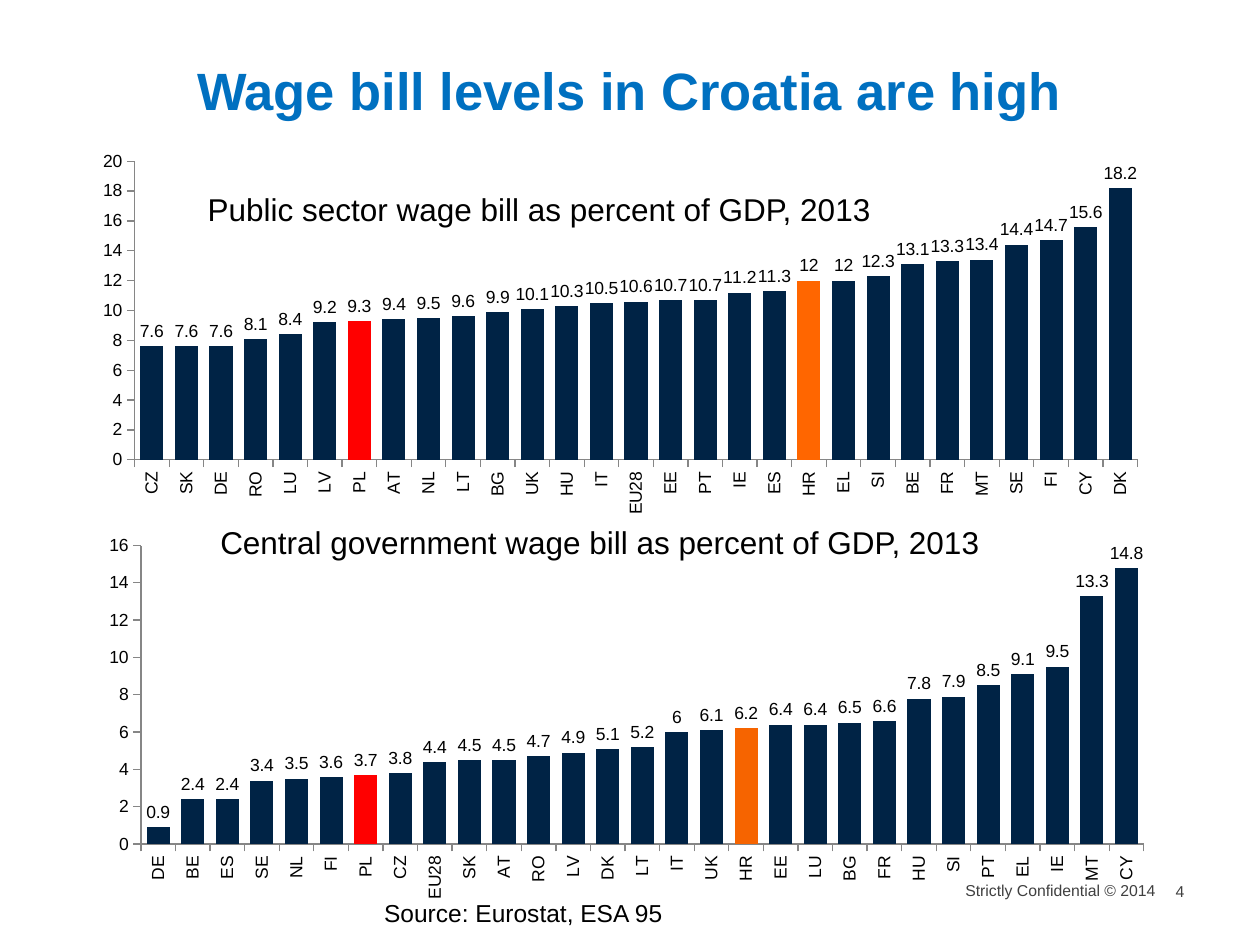
from lxml import etree
from pptx import Presentation
from pptx import util as u
from pptx.chart.data import CategoryChartData
from pptx.dml.color import RGBColor
from pptx.enum import chart as ch, text
from pptx.oxml import parse_xml
from pptx.oxml.ns import nsdecls, qn

COLS, ROWS = 100, 75
FONT = "Arial"
COLORS = {"title": "0070C0", "text": "000000", "footer": "404040", "axis": "868686",
          "bar": "002345", "PL": "FF0000", "HR": "FF6600", "HR central": "F66400"}

PUBLIC = (
    "CZ SK DE RO LU LV PL AT NL LT BG UK HU IT EU28 EE PT IE ES HR EL SI BE FR MT SE FI CY DK".split(),
    [7.6, 7.6, 7.6, 8.1, 8.4, 9.2, 9.3, 9.4, 9.5, 9.6, 9.9, 10.1, 10.3, 10.5, 10.6,
     10.7, 10.7, 11.2, 11.3, 12, 12, 12.3, 13.1, 13.3, 13.4, 14.4, 14.7, 15.6, 18.2])
CENTRAL = (
    "DE BE ES SE NL FI PL CZ EU28 SK AT RO LV DK LT IT UK HR EE LU BG FR HU SI PT EL IE MT CY".split(),
    [0.9, 2.4, 2.4, 3.4, 3.5, 3.6, 3.7, 3.8, 4.4, 4.5, 4.5, 4.7, 4.9, 5.1, 5.2,
     6, 6.1, 6.2, 6.4, 6.4, 6.5, 6.6, 7.8, 7.9, 8.5, 9.1, 9.5, 13.3, 14.8])


def rgb(name):
    return RGBColor.from_string(COLORS[name])


def place(box):
    """Turn a box in grid columns and rows into slide lengths."""
    return [u.Inches(v * size / n) for v, size, n in
            zip(box, (10, 7.5, 10, 7.5), (COLS, ROWS, COLS, ROWS))]


def style_font(font, size, color="text", bold=False):
    font.name, font.size, font.bold = FONT, u.Pt(size), bold
    font.color.rgb = rgb(color)


def add_text(s, box, words, size, color="text", bold=False, align=text.PP_ALIGN.LEFT,
             anchor=text.MSO_ANCHOR.TOP, margins=(0.1, 0.05, 0.1, 0.05), wrap=True):
    tf = s.shapes.add_textbox(*place(box)).text_frame
    tf.word_wrap, tf.vertical_anchor = wrap, anchor
    tf.margin_left, tf.margin_top, tf.margin_right, tf.margin_bottom = map(u.Inches, margins)
    tf.text = words
    p = tf.paragraphs[0]
    p.alignment = align
    style_font(p.runs[0].font, size, color, bold)


def style_axis(axis):
    axis.has_major_gridlines = False
    axis.major_tick_mark = ch.XL_TICK_MARK.OUTSIDE
    axis.minor_tick_mark = ch.XL_TICK_MARK.NONE
    axis.format.line.color.rgb = rgb("axis")
    axis.format.line.width = u.Pt(0.75)
    style_font(axis.tick_labels.font, 10)


def fix_plot_area(chart, x, y, w, h):
    """Set the inner plot area as shares of the chart."""
    area = chart.plots[0]._element.getparent()
    for old in area.findall(qn("c:layout")):
        area.remove(old)
    layout = parse_xml(f'<c:layout {nsdecls("c")}><c:manualLayout/></c:layout>')
    settings = {"layoutTarget": "inner", "xMode": "edge", "yMode": "edge",
                "x": x, "y": y, "w": w, "h": h}
    for tag, value in settings.items():
        etree.SubElement(layout[0], qn(f"c:{tag}")).set("val", str(value))
    area.insert(0, layout)


def wage_panel(s, box, data, top, marks, caption, caption_box, wrap):
    """Column chart with marked countries; the caption box is offset from the panel."""
    countries, shares = data
    cd = CategoryChartData()
    cd.categories = countries
    cd.add_series("Series 1", shares)
    chart = s.shapes.add_chart(ch.XL_CHART_TYPE.COLUMN_CLUSTERED, *place(box), cd).chart
    chart.has_legend = chart.has_title = False
    style_font(chart.font, 10)
    fix_plot_area(chart, 0.05, 0.04, 0.93, 0.79)

    style_axis(chart.category_axis)
    style_axis(chart.value_axis)
    chart.value_axis.minimum_scale, chart.value_axis.maximum_scale = 0, top
    chart.value_axis.major_unit = 2
    body = chart.category_axis._element.find(qn("c:txPr")).find(qn("a:bodyPr"))
    body.set("rot", "-5400000")
    body.set("vert", "horz")

    plot = chart.plots[0]
    plot.gap_width, plot.vary_by_categories = 50, False
    bars = plot.series[0]
    bars.invert_if_negative = False
    bars.format.fill.solid()
    bars.format.fill.fore_color.rgb = rgb("bar")
    for country, color in marks.items():
        fill = bars.points[countries.index(country)].format.fill
        fill.solid()
        fill.fore_color.rgb = rgb(color)
    plot.has_data_labels = True
    labels = plot.data_labels
    labels.show_value = True
    labels.position = ch.XL_LABEL_POSITION.OUTSIDE_END
    style_font(labels.font, 10)

    dx, dy, w, h = caption_box
    add_text(s, (box[0] + dx, box[1] + dy, w, h), caption, 18, wrap=wrap)


def title(s, box):
    add_text(s, box, "Wage bill levels in Croatia are high", 30, "title", True,
             text.PP_ALIGN.CENTER, text.MSO_ANCHOR.BOTTOM, (0, 0, 0, 0.02))


def footer(s, box):
    """Source line, confidentiality note and page number on one strip."""
    x, y, w, h = box
    margins = (0, 0.04, 0, 0)
    add_text(s, (x, y + 1.3, 32.2, 3.4), "Source: Eurostat, ESA 95", 14)
    add_text(s, (x + w - 20.5, y, 15.8, h), "Strictly Confidential © 2014", 9, "footer",
             align=text.PP_ALIGN.RIGHT, margins=margins)
    add_text(s, (x + w - 3.1, y + 0.1, 3.1, h), "4", 9, "footer", margins=margins)


def main():
    prs = Presentation()
    prs.slide_width, prs.slide_height = u.Inches(10), u.Inches(7.5)
    s = prs.slides.add_slide(prs.slide_layouts[6])
    title(s, (3.5, 1.3, 92.9, 8.5))
    wage_panel(s, (6.4, 11.6, 85.6, 30), PUBLIC, 20, {"PL": "PL", "HR": "HR"},
               "Public sector wage bill as percent of GDP, 2013", (9.1, 3, 57.6, 4), False)
    wage_panel(s, (6.9, 42.1, 85.6, 30), CENTRAL, 16, {"PL": "PL", "HR": "HR central"},
               "Central government wage bill as percent of GDP, 2013", (9.6, -1.1, 62.6, 7.1), True)
    footer(s, (29.5, 69.5, 66.9, 2.4))
    prs.save("out.pptx")


if __name__ == "__main__":
    main()
